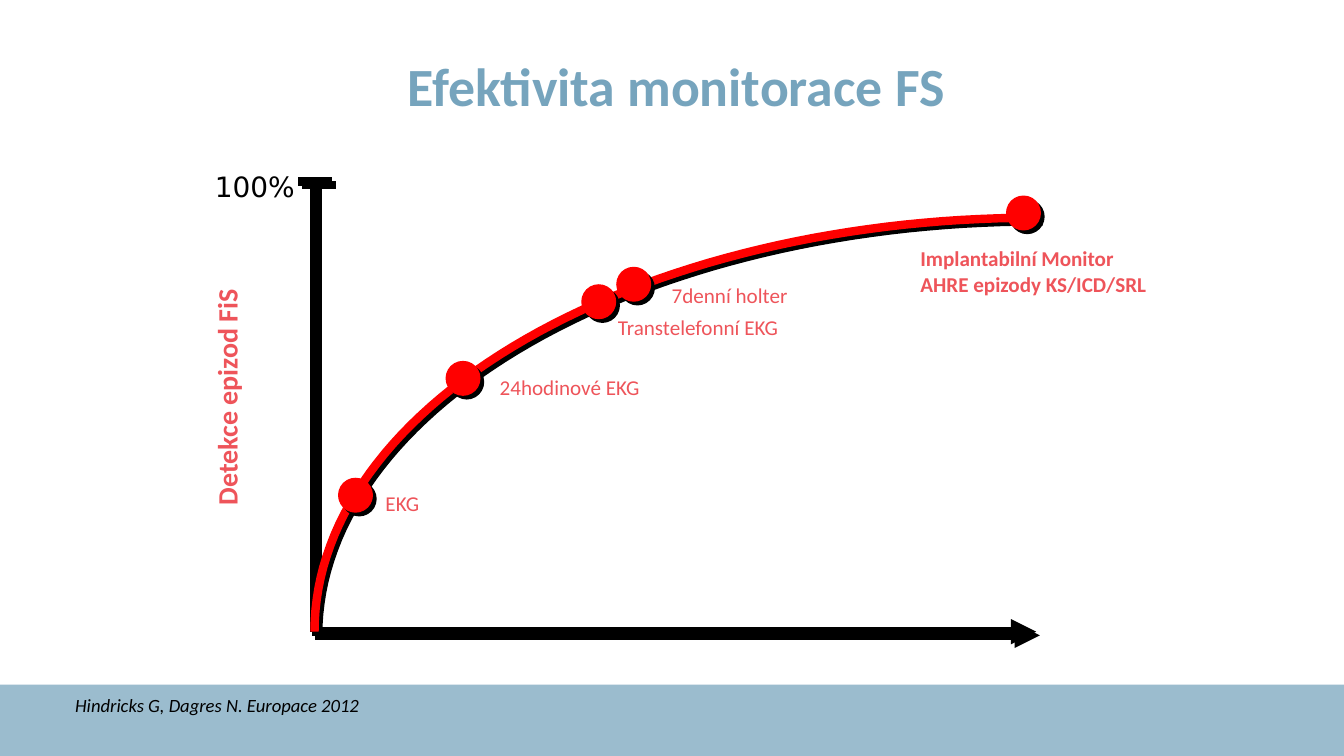
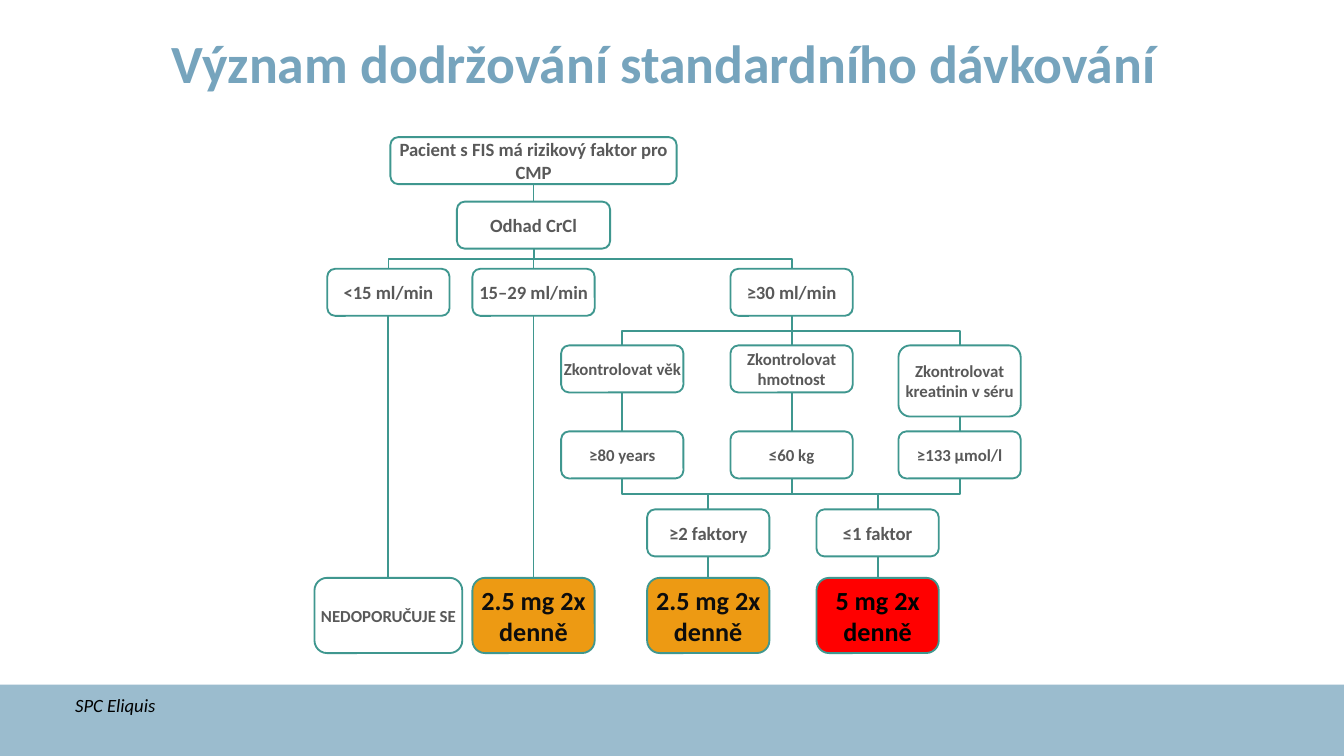
from math import cos, pi, sin

from lxml.etree import SubElement
from pptx import Presentation
from pptx.dml.color import RGBColor
from pptx.enum.shapes import MSO_CONNECTOR, MSO_SHAPE
from pptx.enum.text import MSO_ANCHOR, MSO_AUTO_SIZE, PP_ALIGN
from pptx.oxml.ns import qn
from pptx.util import Inches, Pt

BLUE = RGBColor(0x76, 0xA4, 0xBD)
BLACK = RGBColor(0, 0, 0)
NEAR_BLACK = RGBColor(0x0D, 0x0D, 0x0D)
GRAY = RGBColor(0x59, 0x59, 0x59)
WHITE = RGBColor(0xFF, 0xFF, 0xFF)
RED = RGBColor(0xFF, 0, 0)
CORAL = RGBColor(0xEE, 0x54, 0x5A)
ORANGE = RGBColor(0xED, 0x9A, 0x13)
TEAL = RGBColor(0x3F, 0x97, 0x8F)

SLIM_INSETS = {"margin_left": Inches(0.06), "margin_right": Inches(0.06),
               "margin_top": Inches(0.03), "margin_bottom": Inches(0.03),
               "word_wrap": True, "auto_size": MSO_AUTO_SIZE.NONE}
NO_INSETS = {"margin_left": 0, "margin_right": 0, "margin_top": 0,
             "margin_bottom": 0, "word_wrap": True,
             "vertical_anchor": MSO_ANCHOR.MIDDLE}
FIT_TEXT = {"word_wrap": False, "auto_size": MSO_AUTO_SIZE.SHAPE_TO_FIT_TEXT}


def write_text(shape, text, size, color, frame_format, para_format=None,
               name="Calibri", **font_format):
    """Fill a shape with one paragraph per line of text."""
    frame = shape.text_frame
    for key, value in frame_format.items():
        setattr(frame, key, value)
    for index, line in enumerate(text.split("\n")):
        para = frame.add_paragraph() if index else frame.paragraphs[0]
        for key, value in (para_format or {}).items():
            setattr(para, key, value)
        span = para.add_run()
        span.text = line
        font = {"name": name, "size": Pt(size), **font_format}
        for key, value in font.items():
            setattr(span.font, key, value)
        span.font.color.rgb = color


def cast_shadow(shape):
    """Give a finished shape a hard black shadow to the lower right."""
    effects = SubElement(shape.element.spPr, qn("a:effectLst"))
    shadow = SubElement(effects, qn("a:outerShdw"), blurRad="0",
                        dist=str(Pt(2.8)), dir="2700000", algn="ctr", rotWithShape="0")
    SubElement(shadow, qn("a:srgbClr"), val=str(BLACK))


deck = Presentation()
deck.slide_width = Inches(10)
deck.slide_height = deck.slide_width * 9 // 16
layout = deck.slide_layouts[5]

# Titles and sources
pages = []
for title_text, title_left, title_top, source in [
    ("Efektivita monitorace FS", 0.5, 0.41, "Hindricks G, Dagres N. Europace 2012"),
    ("Význam dodržování standardního dávkování", 0.41, 0.24, "SPC Eliquis"),
]:
    page = deck.slides.add_slide(layout)
    title = page.shapes.title
    title.left, title.top = Inches(title_left), Inches(title_top)
    title.width, title.height = Inches(9.06), Inches(0.5)
    write_text(title, title_text, 28.8, BLUE,
               {**SLIM_INSETS, "vertical_anchor": MSO_ANCHOR.MIDDLE},
               {"alignment": PP_ALIGN.CENTER, "line_spacing": 0.9}, bold=True)
    box = page.shapes.add_textbox(Inches(0.5), Inches(5.15), Inches(5), Inches(0.41))
    write_text(box, source, 10, BLACK, SLIM_INSETS, {"line_spacing": 0.9}, italic=True)
    pages.append(page)
curve_page, dosing_page = pages

# The bottom band belongs to the shared layout
BAND_HEIGHT = Inches(0.53)
band = curve_page.shapes.add_shape(
    MSO_SHAPE.RECTANGLE, 0, deck.slide_height - BAND_HEIGHT, deck.slide_width, BAND_HEIGHT)
band.shadow.inherit = False
band.fill.solid()
band.fill.fore_color.rgb = BLUE
band.line.fill.background()
band_color = next(band.element.iter(qn("a:srgbClr")))
SubElement(band_color, qn("a:alpha"), val="73000")
band.element.nvSpPr.cNvPr.set("id", "20")
layout.shapes.element.insert(2, band.element)

# Slide 1: axes
ORIGIN_X, ORIGIN_Y, AXIS_TOP, AXIS_RIGHT = 2.34, 4.7, 1.35, 7.71
for x1, y1, x2, y2, has_arrow in [
    (ORIGIN_X, AXIS_TOP, ORIGIN_X, ORIGIN_Y, False),
    (2.32, ORIGIN_Y, AXIS_RIGHT, ORIGIN_Y, True),
    (2.22, AXIS_TOP, 2.47, AXIS_TOP, False),
]:
    axis = curve_page.shapes.add_connector(
        MSO_CONNECTOR.STRAIGHT, Inches(x1), Inches(y1), Inches(x2), Inches(y2))
    axis.line.color.rgb = BLACK
    axis.line.width = Pt(4.5)
    if has_arrow:
        SubElement(axis.element.spPr.find(qn("a:ln")), qn("a:tailEnd"), type="triangle")
    cast_shadow(axis)

axis_title = curve_page.shapes.add_textbox(
    Inches(-0.03), Inches(2.78), Inches(3.43), Inches(0.35))
axis_title.rotation = 270
write_text(axis_title, "Detekce epizod FiS", 15, CORAL, {**FIT_TEXT, "word_wrap": True},
           {"alignment": PP_ALIGN.CENTER}, bold=True)
axis_top_label = curve_page.shapes.add_textbox(
    Inches(1.5), Inches(1.21), Inches(0.83), Inches(0.35))
write_text(axis_top_label, "100%", 15, BLACK, FIT_TEXT, name="DejaVu Sans")

# Slide 1: detection curve, a quarter of an ellipse
CURVE_TOP = 1.62
STEPS = 60
curve_points = [
    (Inches(AXIS_RIGHT - (AXIS_RIGHT - ORIGIN_X) * cos(step * pi / 2 / STEPS)),
     Inches(ORIGIN_Y - (ORIGIN_Y - CURVE_TOP) * sin(step * pi / 2 / STEPS)))
    for step in range(STEPS + 1)
]
curve_points.append((Inches(7.73), Inches(CURVE_TOP)))
builder = curve_page.shapes.build_freeform(*curve_points[0])
builder.add_line_segments(curve_points[1:], close=False)
curve = builder.convert_to_shape()
curve.fill.background()
curve.line.color.rgb = RED
curve.line.width = Pt(4.5)
cast_shadow(curve)

# Slide 1: methods as (marker left, top), (label left, top, width, height), text, bold
for marker_at, label_at, text, bold in [
    ((2.52, 3.56), (2.77, 3.6, 0.46, 0.29), "EKG", False),
    ((3.32, 2.69), (3.62, 2.74, 1.26, 0.29), "24hodinové EKG", False),
    ((4.33, 2.12), (4.5, 2.29, 1.43, 0.29), "Transtelefonní EKG", False),
    ((4.59, 1.99), (4.9, 2.05, 1.07, 0.29), "7denní holter", False),
    ((7.49, 1.46), (6.75, 1.78, 1.9, 0.48),
     "Implantabilní Monitor\nAHRE epizody KS/ICD/SRL", True),
]:
    marker = curve_page.shapes.add_shape(
        MSO_SHAPE.FLOWCHART_CONNECTOR, *map(Inches, marker_at), Inches(0.25), Inches(0.25))
    marker.fill.solid()
    marker.fill.fore_color.rgb = RED
    marker.line.color.rgb = RED
    marker.line.width = Pt(0.75)
    cast_shadow(marker)
    label = curve_page.shapes.add_textbox(*map(Inches, label_at))
    write_text(label, text, 11.25, CORAL, FIT_TEXT, bold=bold)

# Slide 2: boxes as centre, top, width, height, text, size, fill, text colour
BOX_WIDTH, BOX_HEIGHT, DOSE_HEIGHT = 0.91, 0.35, 0.56
LOW, MIDDLE, AGE, WEIGHT, CREATININE, MANY, FEW = 2.89, 3.97, 4.63, 5.89, 7.14, 5.27, 6.53
CLEARANCE_TOP, CHECK_TOP, LIMIT_TOP, FACTOR_TOP, DOSE_TOP = 2, 2.57, 3.21, 3.79, 4.3
plain = (WHITE, GRAY)
boxes = {}
for key, center, top, width, height, text, size, (fill, color) in [
    ("patient", MIDDLE, 1.02, 2.13, BOX_HEIGHT,
     "Pacient s FIS má rizikový faktor pro CMP", 10, plain),
    ("estimate", MIDDLE, 1.5, 1.14, BOX_HEIGHT, "Odhad CrCl", 10, plain),
    ("under 15", LOW, CLEARANCE_TOP, BOX_WIDTH, BOX_HEIGHT, "<15 ml/min", 10, plain),
    ("15 to 29", MIDDLE, CLEARANCE_TOP, BOX_WIDTH, BOX_HEIGHT, "15–29 ml/min", 10, plain),
    ("over 30", WEIGHT, CLEARANCE_TOP, BOX_WIDTH, BOX_HEIGHT, "≥30 ml/min", 10, plain),
    ("age", AGE, CHECK_TOP, BOX_WIDTH, BOX_HEIGHT, "Zkontrolovat věk", 9, plain),
    ("weight", WEIGHT, CHECK_TOP, BOX_WIDTH, BOX_HEIGHT, "Zkontrolovat hmotnost", 9, plain),
    ("creatinine", CREATININE, CHECK_TOP, BOX_WIDTH, 0.53,
     "Zkontrolovat kreatinin v séru", 9, plain),
    ("80 years", AGE, LIMIT_TOP, BOX_WIDTH, BOX_HEIGHT, "≥80 years", 9, plain),
    ("60 kg", WEIGHT, LIMIT_TOP, BOX_WIDTH, BOX_HEIGHT, "≤60 kg", 9, plain),
    ("133 µmol", CREATININE, LIMIT_TOP, BOX_WIDTH, BOX_HEIGHT, "≥133 µmol/l", 9, plain),
    ("many", MANY, FACTOR_TOP, BOX_WIDTH, BOX_HEIGHT, "≥2 faktory", 10, plain),
    ("few", FEW, FACTOR_TOP, BOX_WIDTH, BOX_HEIGHT, "≤1 faktor", 10, plain),
    ("avoid", LOW, DOSE_TOP, 1.1, DOSE_HEIGHT, "NEDOPORUČUJE SE", 9, plain),
    ("reduced", MIDDLE, DOSE_TOP, BOX_WIDTH, DOSE_HEIGHT,
     "2.5 mg 2x denně", 14, (ORANGE, NEAR_BLACK)),
    ("reduced by factors", MANY, DOSE_TOP, BOX_WIDTH, DOSE_HEIGHT,
     "2.5 mg 2x denně", 14, (ORANGE, NEAR_BLACK)),
    ("full", FEW, DOSE_TOP, BOX_WIDTH, DOSE_HEIGHT, "5 mg 2x denně", 14, (RED, BLACK)),
]:
    box = dosing_page.shapes.add_shape(
        MSO_SHAPE.ROUNDED_RECTANGLE, Inches(center - width / 2), Inches(top),
        Inches(width), Inches(height))
    box.shadow.inherit = False
    box.fill.solid()
    box.fill.fore_color.rgb = fill
    box.line.color.rgb = TEAL
    box.line.width = Pt(1)
    write_text(box, text, size, color, NO_INSETS,
               {"alignment": PP_ALIGN.CENTER}, bold=True)
    boxes[key] = (box, Inches(center))

# Slide 2: links run from the bottom of one box to the top of the next
for upper_key, lower_keys in [
    ("patient", ["estimate"]),
    ("estimate", ["under 15", "15 to 29", "over 30"]),
    ("under 15", ["avoid"]),
    ("15 to 29", ["reduced"]),
    ("over 30", ["age", "weight", "creatinine"]),
    ("age", ["80 years"]),
    ("weight", ["60 kg"]),
    ("creatinine", ["133 µmol"]),
    ("80 years", ["many"]),
    ("60 kg", ["many", "few"]),
    ("133 µmol", ["few"]),
    ("many", ["reduced by factors"]),
    ("few", ["full"]),
]:
    upper, x1 = boxes[upper_key]
    y1 = upper.top + upper.height
    for lower_key in lower_keys:
        lower, x2 = boxes[lower_key]
        y2 = lower.top
        if x1 == x2:
            link = dosing_page.shapes.add_connector(MSO_CONNECTOR.STRAIGHT, x1, y1, x2, y2)
            link.begin_connect(upper, 2)
            link.end_connect(lower, 0)
        else:
            # An elbow leaves sideways, so it is laid flat and then turned upright
            middle_x, middle_y = (x1 + x2) // 2, (y1 + y2) // 2
            half_drop, half_run = (y2 - y1) // 2, abs(x2 - x1) // 2
            link = dosing_page.shapes.add_connector(
                MSO_CONNECTOR.ELBOW, middle_x - half_drop, middle_y - half_run,
                middle_x + half_drop, middle_y + half_run)
            frame = link.element.spPr.find(qn("a:xfrm"))
            frame.set("rot", "5400000" if x2 < x1 else "16200000")
            if x2 > x1:
                frame.set("flipH", "1")
        link.line.color.rgb = TEAL
        link.line.width = Pt(1)
        SubElement(link.element.spPr, qn("a:effectLst"))

deck.save("out.pptx")
